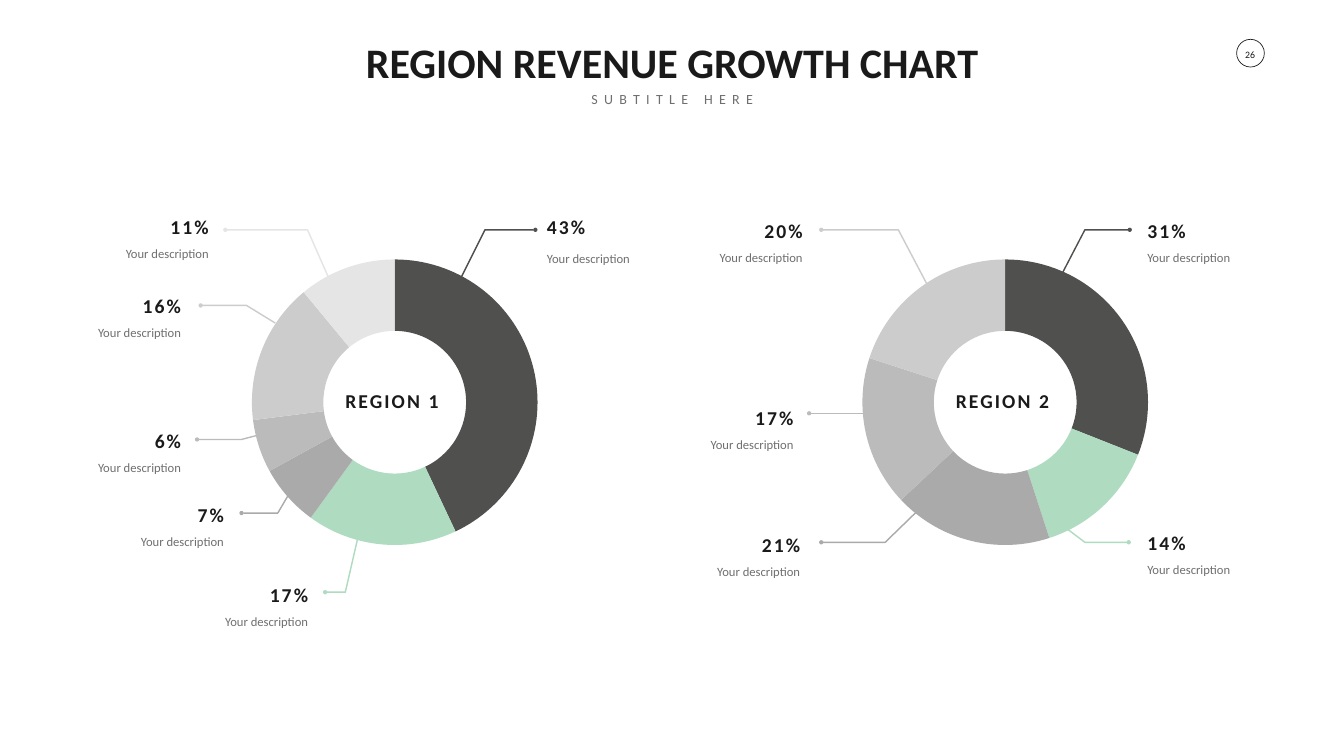
import lxml.etree
import pptx
import pptx.chart.data
import pptx.dml.color
import pptx.enum.chart
import pptx.enum.shapes
import pptx.enum.text
import pptx.oxml.ns
import pptx.util

PX = 9144
qn = pptx.oxml.ns.qn
align = pptx.enum.text.PP_ALIGN
anchor = pptx.enum.text.MSO_ANCHOR
oval = pptx.enum.shapes.MSO_SHAPE.OVAL

theme = {
    "font": "Calibri",
    "ink": "1A1A1A",
    "muted": "6F6F6F",
    "slices": ["50514F", "AFDBC1", "AAAAAA", "BBBBBB", "CCCCCC", "E5E5E5"],
    "text": {
        "title": {"size": 60, "bold": True, "color": "ink", "tracking": 0},
        "subtitle": {"size": 20, "bold": False, "color": "muted", "tracking": 900},
        "value": {"size": 28, "bold": True, "color": "ink", "tracking": 300},
        "description": {"size": 18, "bold": False, "color": "muted", "tracking": 0},
        "number": {"size": 14, "bold": False, "color": "ink", "tracking": 0},
    },
}


def rgb(value):
    return pptx.dml.color.RGBColor.from_string(value)


def write(box, text, style, side, wrap=False, middle=False, leading=None, before=False):
    look = theme["text"][style]
    frame = box.text_frame
    frame.word_wrap = wrap
    frame.auto_size = pptx.enum.text.MSO_AUTO_SIZE.SHAPE_TO_FIT_TEXT
    frame.vertical_anchor = anchor.MIDDLE if middle else anchor.TOP
    para = frame.paragraphs[0]
    para.alignment = side
    if leading:
        para.line_spacing = pptx.util.Pt(leading)
    if before:
        gap = lxml.etree.SubElement(para._p.get_or_add_pPr(), qn("a:spcBef"))
        lxml.etree.SubElement(gap, qn("a:spcPct")).set("val", "20000")
    span = para.add_run()
    span.text = text
    formats = {"name": theme["font"], "size": pptx.util.Pt(look["size"]), "bold": look["bold"]}
    for name, value in formats.items():
        setattr(span.font, name, value)
    span.font.color.rgb = rgb(theme[look["color"]])
    if look["tracking"]:
        span._r.get_or_add_rPr().set("spc", str(look["tracking"]))


regions = [
    {
        "name": "REGION 1", "left": 222, "values": [43, 17, 7, 6, 16, 11],
        "labels": [
            ("43%", 1075, 421, [(904, 572), (962, 456), (1062, 456)]),
            ("17%", 621, 1151, [(713, 1053), (685, 1175), (645, 1175)]),
            ("7%", 454, 992, [(578, 972), (551, 1018), (479, 1018)]),
            ("6%", 369, 846, [(521, 861), (479, 872), (391, 872)]),
            ("16%", 369, 578, [(546, 641), (489, 606), (398, 606)]),
            ("11%", 424, 421, [(654, 556), (610, 456), (447, 456)]),
        ],
    },
    {
        "name": "REGION 2", "left": 1433, "values": [31, 14, 18, 17, 20],
        "labels": [
            ("31%", 2266, 429, [(2100, 556), (2152, 456), (2241, 456)]),
            ("14%", 2266, 1048, [(2107, 1042), (2152, 1076), (2239, 1076)]),
            ("21%", 1597, 1052, [(1832, 1002), (1756, 1076), (1629, 1076)]),
            ("17%", 1584, 801, [(1721, 820), (1605, 820)]),
            ("20%", 1602, 429, [(1843, 572), (1782, 456), (1629, 456)]),
        ],
    },
]
plot_layout = {
    "layoutTarget": "inner", "xMode": "edge", "yMode": "edge",
    "x": "0.25", "y": "0.18", "w": "0.51", "h": "0.61",
}

deck = pptx.Presentation()
deck.slide_width = 2666 * PX
deck.slide_height = 1500 * PX
page = deck.slides.add_slide(deck.slide_layouts[6])
shapes = page.shapes

number = shapes.add_shape(oval, 2460 * PX, 85 * PX, 40 * PX, 40 * PX)
ring = shapes.add_shape(oval, 2453 * PX, 78 * PX, 55 * PX, 55 * PX)
for circle in (number, ring):
    circle.shadow.inherit = False
    circle.fill.background()
number.line.fill.background()
ring.line.color.rgb = rgb(theme["ink"])
ring.line.width = pptx.util.Pt(1)
write(number, "26", "number", align.CENTER)
number_format = {
    "auto_size": pptx.enum.text.MSO_AUTO_SIZE.NONE, "vertical_anchor": anchor.BOTTOM,
    "margin_left": 0, "margin_top": 0, "margin_right": 0, "margin_bottom": 0,
}
for name, value in number_format.items():
    setattr(number.text_frame, name, value)

for region in regions:
    data = pptx.chart.data.CategoryChartData()
    data.categories = [str(index + 1) for index in range(len(region["values"]))]
    data.add_series("Series 1", region["values"])
    chart = shapes.add_chart(
        pptx.enum.chart.XL_CHART_TYPE.DOUGHNUT,
        region["left"] * PX, 318 * PX, 1111 * PX, 990 * PX, data,
    ).chart
    chart.has_legend = False
    chart.has_title = False
    chart.font.name = theme["font"]
    chart.font.size = pptx.util.Pt(18)
    chart.font.color.rgb = rgb(theme["muted"])
    plot = chart.plots[0]
    plot.vary_by_categories = True
    for index in range(len(region["values"])):
        slice_format = plot.series[0].points[index].format
        slice_format.fill.solid()
        slice_format.fill.fore_color.rgb = rgb(theme["slices"][index])
        slice_format.line.fill.background()
    area = chart._chartSpace.find(".//" + qn("c:plotArea"))
    area.find(".//" + qn("c:holeSize")).set("val", "90")
    for layout in area.findall(qn("c:layout")):
        area.remove(layout)
    layout = lxml.etree.Element(qn("c:layout"))
    area.insert(0, layout)
    manual = lxml.etree.SubElement(layout, qn("c:manualLayout"))
    for name, value in plot_layout.items():
        lxml.etree.SubElement(manual, qn("c:" + name)).set("val", value)

    center = shapes.add_textbox((region["left"] + 442) * PX, 766 * PX, 227 * PX, 57 * PX)
    write(center, region["name"], "value", align.CENTER, middle=True)

    for color, (text, edge, top, points) in zip(theme["slices"], region["labels"]):
        if len(points) == 2:
            (x1, y1), (x2, y2) = points
            leader = shapes.add_connector(
                pptx.enum.shapes.MSO_CONNECTOR.STRAIGHT, x1 * PX, y1 * PX, x2 * PX, y2 * PX
            )
        else:
            builder = shapes.build_freeform(*points[0], scale=PX)
            builder.add_line_segments(points[1:], close=False)
            leader = builder.convert_to_shape()
            leader.fill.background()
        leader.line.color.rgb = rgb(color)
        leader.line.width = pptx.util.Pt(2)
        properties = leader._element.spPr
        lxml.etree.SubElement(properties.find(qn("a:ln")), qn("a:tailEnd")).set("type", "oval")
        lxml.etree.SubElement(properties, qn("a:effectLst"))

        rightward = points[-1][0] > points[0][0]
        side = align.LEFT if rightward else align.RIGHT
        width = 107 if len(text) == 3 else 80
        left = edge if rightward else edge - width
        value_box = shapes.add_textbox(left * PX, top * PX, width * PX, 57 * PX)
        write(value_box, text, "value", side, middle=True)
        leading, height = (37, 57) if text == "43%" else (30, 49)
        left = edge if rightward else edge - 214
        description = shapes.add_textbox(left * PX, (top + 50) * PX, 214 * PX, height * PX)
        write(description, "Your description", "description", side,
              wrap=True, leading=leading, before=True)

title = shapes.add_textbox(642 * PX, 68 * PX, 1383 * PX, 111 * PX)
write(title, "REGION REVENUE GROWTH CHART", "title", align.CENTER)
subtitle = shapes.add_textbox(1139 * PX, 174 * PX, 389 * PX, 44 * PX)
write(subtitle, "SUBTITLE HERE", "subtitle", align.CENTER, before=True)

deck.save("out.pptx")
